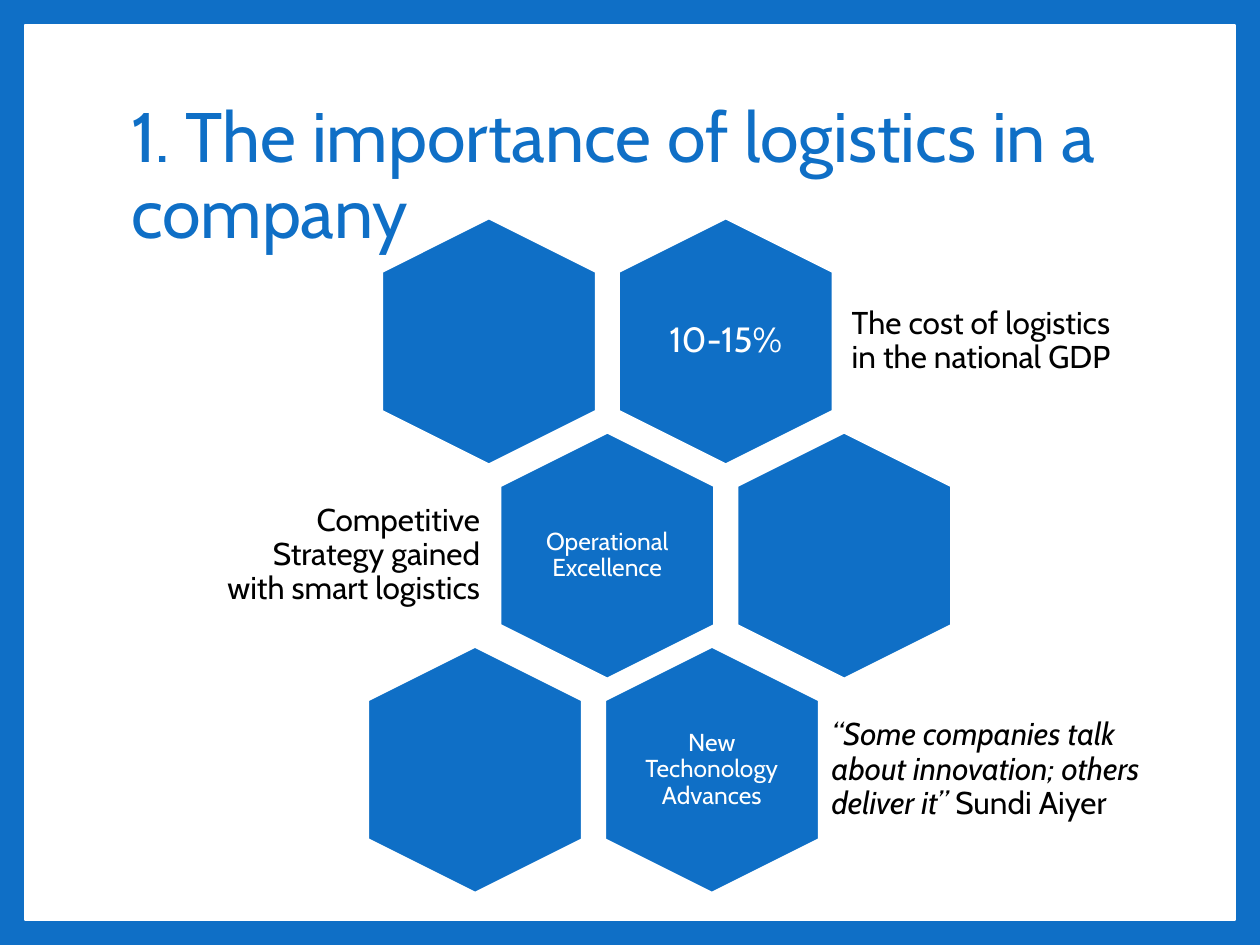
from pptx import Presentation
from pptx.dml.color import RGBColor
from pptx.enum.shapes import MSO_SHAPE as Shape
from pptx.enum.text import MSO_ANCHOR as Anchor, PP_ALIGN as Align
from pptx.util import Inches, Pt

BLUE, WHITE, BLACK = "0F6FC6", "FFFFFF", "000000"
FONT = "Cabin"
WIDTH, HEIGHT, MARGIN = 10, 7.5, 0.2
HEX_LENGTH, HEX_BREADTH = 2, 1.74
COLUMN_PITCH, ROW_PITCH, FIRST_ROW = 1.88, 1.7, 2.71
LABEL_WIDTH, LABEL_HEIGHT, NOTE_HEIGHT = 1.2, 1.38, 1.2

# (first hexagon centre, labelled column, label, label size, note left, note width, note align, note runs)
ROWS = [
    (3.88, 1, "10-15%", 20, 6.69, 2.23, Align.LEFT,
     [("The cost of logistics in the national GDP", False)]),
    (4.82, 0, "Operational Excellence", 14, 1.72, 2.16, Align.RIGHT,
     [("Competitive Strategy gained with smart logistics", False)]),
    (3.77, 1, "New Techonology Advances", 14, 6.53, 2.7, Align.LEFT,
     [("“Some companies talk about innovation; others deliver it” ", True),
      ("Sundi Aiyer", False)]),
]


def color(value):
    """Turn a hex string into a colour."""
    return RGBColor.from_string(value)


def box(left, top, width, height):
    """Convert a box in inches to slide units."""
    return [Inches(length) for length in (left, top, width, height)]


def write(frame, runs, size, text_color, align=Align.LEFT, inset=0.1):
    """Fill a text frame with one paragraph of (text, italic) runs."""
    frame.word_wrap = True
    frame.vertical_anchor = Anchor.MIDDLE
    frame.margin_left = frame.margin_right = Inches(inset)
    frame.margin_top = frame.margin_bottom = Inches(min(inset, 0.07))
    paragraph = frame.paragraphs[0]
    paragraph.alignment = align
    paragraph.line_spacing = 0.9
    paragraph.space_before = Pt(0)
    for text, italic in runs:
        run = paragraph.add_run()
        run.text = text
        font = run.font
        font.name, font.size, font.italic = FONT, Pt(size), italic
        font.color.rgb = color(text_color)


def add_filled(shapes, kind, position, fill, line_width):
    """Add a filled preset shape with a white outline."""
    shape = shapes.add_shape(kind, *box(*position))
    shape.shadow.inherit = False
    shape.fill.solid()
    shape.fill.fore_color.rgb = color(fill)
    shape.line.color.rgb = color(WHITE)
    shape.line.width = Pt(line_width)
    return shape


def add_hexagon(shapes, center_x, center_y):
    """Add an upright hexagon around a centre."""
    position = (center_x - HEX_LENGTH / 2, center_y - HEX_BREADTH / 2,
                HEX_LENGTH, HEX_BREADTH)
    hexagon = add_filled(shapes, Shape.HEXAGON, position, BLUE, 4.25)
    hexagon.adjustments[0] = 0.25
    hexagon.rotation = 90


def add_text(shapes, position, runs, size, text_color, align):
    """Add a wrapped text box."""
    textbox = shapes.add_textbox(*box(*position))
    write(textbox.text_frame, runs, size, text_color, align, 0.07)


def add_row(shapes, index, row):
    """Add two hexagons, the label in one of them and the note beside it."""
    first_x, labelled, label, size, note_left, note_width, align, note = row
    center_y = FIRST_ROW + index * ROW_PITCH
    for column in range(2):
        add_hexagon(shapes, first_x + column * COLUMN_PITCH, center_y)
    label_x = first_x + labelled * COLUMN_PITCH
    add_text(shapes, (label_x - LABEL_WIDTH / 2, center_y - LABEL_HEIGHT / 2,
                      LABEL_WIDTH, LABEL_HEIGHT),
             [(label, False)], size, WHITE, Align.CENTER)
    add_text(shapes, (note_left, center_y - NOTE_HEIGHT / 2, note_width, NOTE_HEIGHT),
             note, 18, BLACK, align)


def add_title(slide, text):
    """Place and fill the title placeholder."""
    title = slide.shapes.title
    title.left, title.top, title.width, title.height = box(0.94, 0.67, 8.1, 1.48)
    write(title.text_frame, [(text, False)], 40, BLUE)


def add_frame(slide):
    """Set a blue background with a white panel behind the title."""
    slide.background.fill.solid()
    slide.background.fill.fore_color.rgb = color(BLUE)
    position = (MARGIN, MARGIN, WIDTH - 2 * MARGIN, HEIGHT - 2 * MARGIN)
    panel = add_filled(slide.shapes, Shape.RECTANGLE, position, WHITE, 1)
    slide.shapes.title.element.addprevious(panel.element)


def main():
    """Build and save the slide."""
    presentation = Presentation()
    presentation.slide_width, presentation.slide_height = Inches(WIDTH), Inches(HEIGHT)
    slide = presentation.slides.add_slide(presentation.slide_layouts[5])
    add_frame(slide)
    add_title(slide, "1. The importance of logistics in a company")
    honeycomb = slide.shapes.add_group_shape()
    for index, row in enumerate(ROWS):
        add_row(honeycomb.shapes, index, row)
    presentation.save("out.pptx")


if __name__ == "__main__":
    main()
